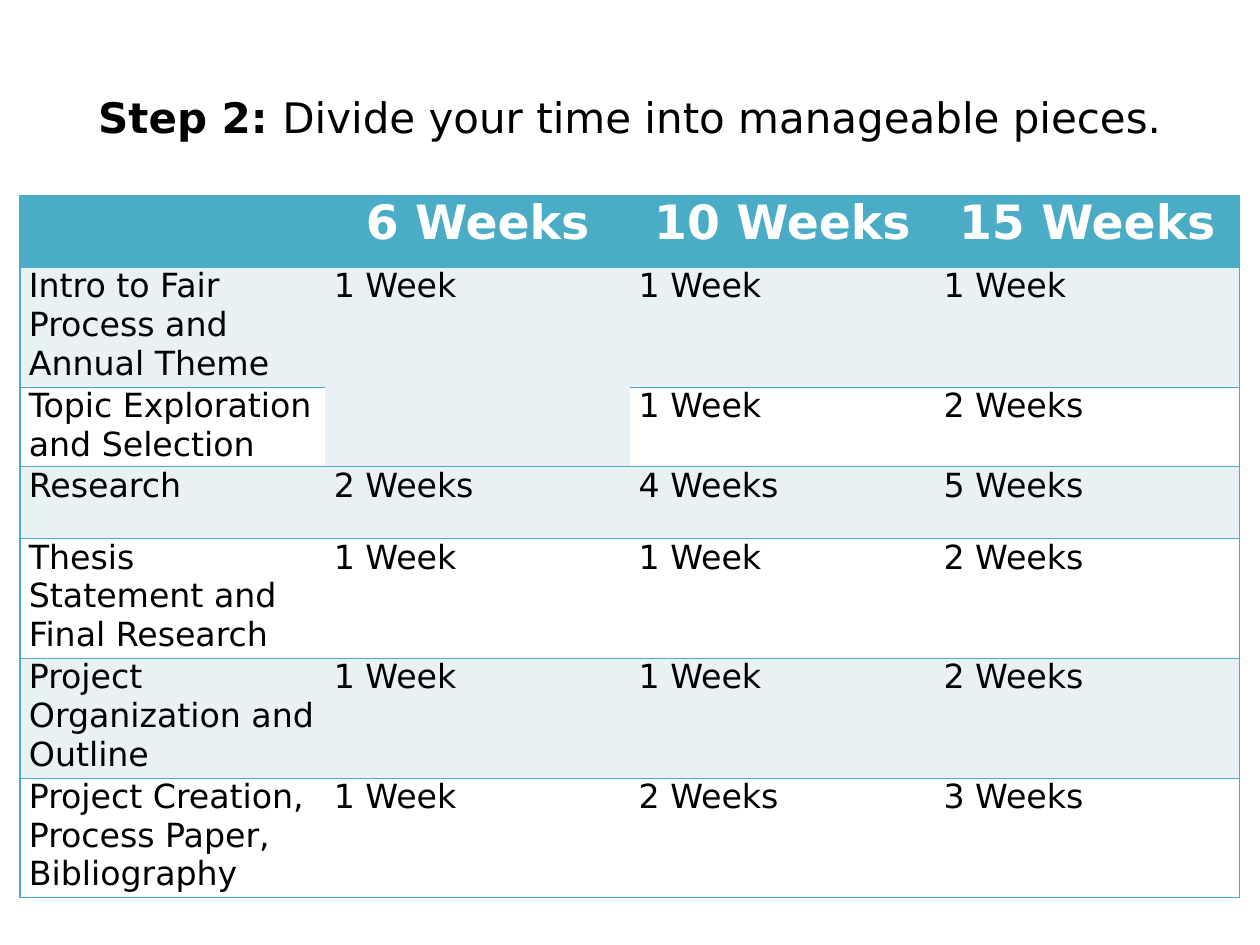
from lxml import etree
from pptx import Presentation
from pptx.dml.color import RGBColor
from pptx.enum.text import MSO_ANCHOR, PP_ALIGN
from pptx.oxml.ns import qn
from pptx.util import Inches, Pt

CENTER, LEFT = PP_ALIGN.CENTER, PP_ALIGN.LEFT
MIDDLE = MSO_ANCHOR.MIDDLE
BLANK_LAYOUT = 6

HEADER = ["", "6 Weeks", "10 Weeks", "15 Weeks"]
STAGES = [
    ["Intro to Fair Process and Annual Theme", "1 Week", "1 Week", "1 Week"],
    ["Topic Exploration and Selection", "", "1 Week", "2 Weeks"],
    ["Research", "2 Weeks", "4 Weeks", "5 Weeks"],
    ["Thesis Statement and Final Research", "1 Week", "1 Week", "2 Weeks"],
    ["Project Organization and Outline", "1 Week", "1 Week", "2 Weeks"],
    ["Project Creation, Process Paper, Bibliography", "1 Week", "2 Weeks", "3 Weeks"],
]
ROW_HEIGHTS = [0.57, 0.92, 0.62, 0.57, 0.92, 0.92, 0.92]
COLUMN_WIDTH = 2.42


def color(hex_text):
    return RGBColor.from_string(hex_text)


class ScheduleSlide:
    font_name = "DejaVu Sans"
    accent, band, white, black = "4BACC6", "E9F1F5", "FFFFFF", "000000"
    header_format = {"size": Pt(27), "bold": True}
    body_format = {"size": Pt(19), "bold": False}
    edge_width, row_line_width = Pt(1), Pt(0.25)

    def __init__(self, slide):
        self.slide = slide

    def add_run(self, paragraph, text, font_color, font_format):
        run = paragraph.add_run()
        run.text = text
        run.font.color.rgb = color(font_color)
        for name, value in {"name": self.font_name, **font_format}.items():
            setattr(run.font, name, value)

    def add_title(self, left, top, width, height, runs):
        """Add a centred title from (text, bold) pairs."""
        box = self.slide.shapes.add_textbox(
            Inches(left), Inches(top), Inches(width), Inches(height))
        frame = box.text_frame
        frame.word_wrap = True
        frame.vertical_anchor = MIDDLE
        paragraph = frame.paragraphs[0]
        paragraph.alignment = CENTER
        for text, bold in runs:
            self.add_run(paragraph, text, self.black, {"size": Pt(24), "bold": bold})

    def add_borders(self, cell, widths):
        """Draw accent lines by side, none where the width is 0, ahead of the fill."""
        properties = cell._tc.get_or_add_tcPr()
        for index, (side, width) in enumerate(widths.items()):
            line = etree.Element(qn(f"a:ln{side}"), w=str(width))
            if width:
                fill = etree.SubElement(line, qn("a:solidFill"))
                etree.SubElement(fill, qn("a:srgbClr"), val=self.accent)
            else:
                etree.SubElement(line, qn("a:noFill"))
            properties.insert(index, line)

    def fill_cell(self, cell, text, is_header, fill):
        margins = {"margin_left": 0.07, "margin_right": 0.07,
                   "margin_top": 0, "margin_bottom": 0}
        for name, value in margins.items():
            setattr(cell, name, Inches(value))
        cell.fill.solid()
        cell.fill.fore_color.rgb = color(fill)
        paragraph = cell.text_frame.paragraphs[0]
        paragraph.alignment = CENTER if is_header else LEFT
        if text:
            self.add_run(paragraph, text, self.white if is_header else self.black,
                         self.header_format if is_header else self.body_format)

    def add_table(self, left, top, rows):
        column_count = len(rows[0])
        table = self.slide.shapes.add_table(
            len(rows), column_count, Inches(left), Inches(top),
            Inches(COLUMN_WIDTH * column_count), Inches(sum(ROW_HEIGHTS))).table
        for column in table.columns:
            column.width = Inches(COLUMN_WIDTH)
        for row_index, texts in enumerate(rows):
            table.rows[row_index].height = Inches(ROW_HEIGHTS[row_index])
            is_header = row_index == 0
            fill = self.accent if is_header else self.band if row_index % 2 else self.white
            for column_index, text in enumerate(texts):
                cell = table.cell(row_index, column_index)
                self.fill_cell(cell, text, is_header, fill)
                self.add_borders(cell, {
                    "L": self.edge_width if column_index == 0 else 0,
                    "R": self.edge_width if column_index == column_count - 1 else 0,
                    "T": self.row_line_width,
                    "B": self.row_line_width,
                })
        table.cell(1, 1).merge(table.cell(2, 1))


def main():
    presentation = Presentation()
    presentation.slide_width, presentation.slide_height = Inches(10), Inches(7.5)
    layout = presentation.slide_layouts[BLANK_LAYOUT]
    schedule = ScheduleSlide(presentation.slides.add_slide(layout))
    schedule.add_title(0.5, 0.3, 9, 1.25, [
        ("Step 2: ", True), ("Divide your time into manageable pieces.", False)])
    schedule.add_table(0.16, 1.55, [HEADER] + STAGES)
    presentation.save("out.pptx")


if __name__ == "__main__":
    main()
